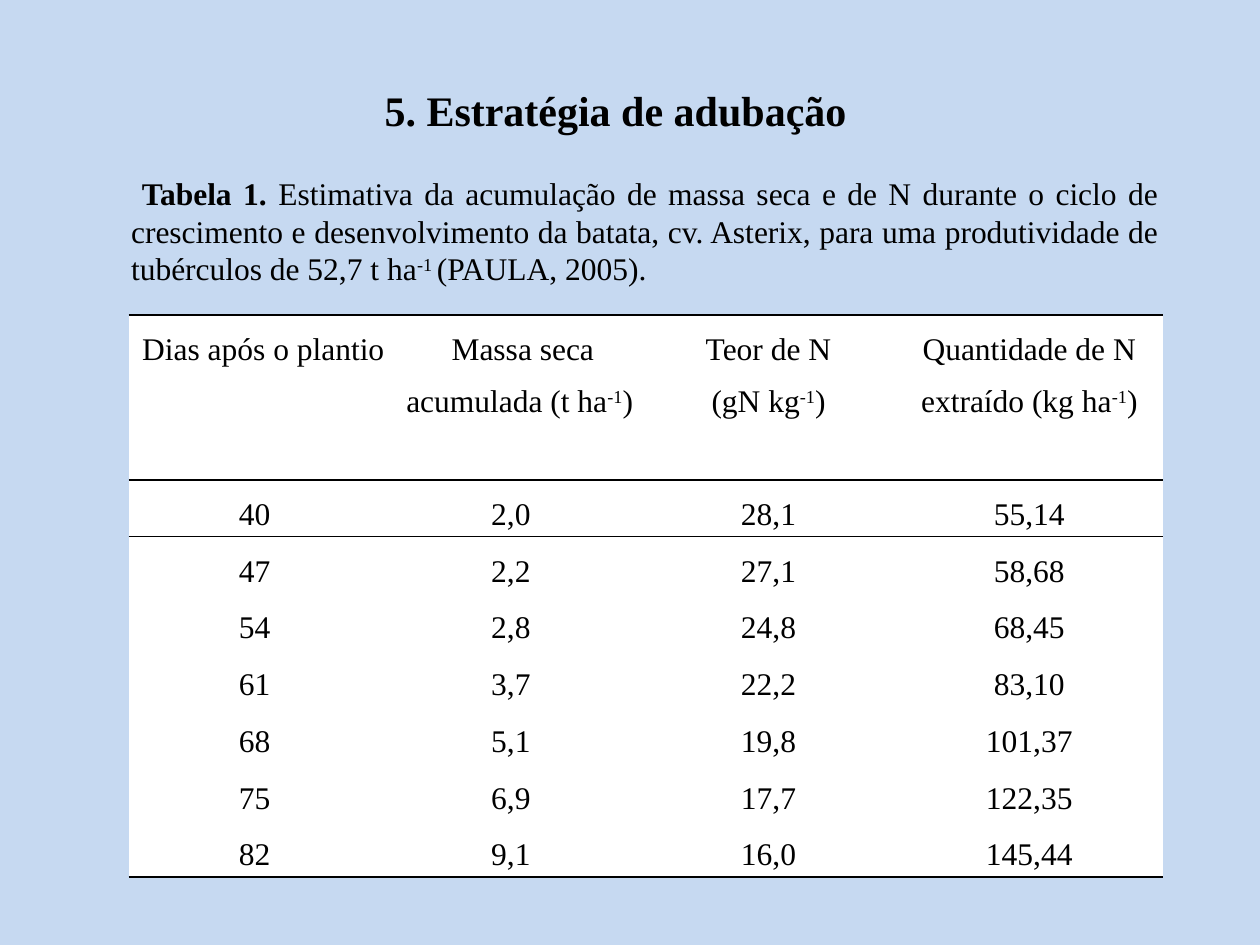
from dataclasses import dataclass

from lxml import etree
from pptx import Presentation
from pptx import util as u
from pptx.dml.color import RGBColor
from pptx.enum import text as t
from pptx.oxml import ns

FONT = "Times New Roman"
BLACK, WHITE, SKY = "000000", "FFFFFF", "C6D9F1"
PLAIN = "{2D5ABB26-0587-4C30-8999-92F81FD0307C}"  # table style without grid


@dataclass
class Box:
    left: float
    top: float
    width: float
    height: float


@dataclass
class Row:
    height: float
    cells: tuple[str, ...]
    join: int  # first of the two columns that are merged
    edges: str = ""  # ruled sides: T, B


def paint(color, code: str) -> None:
    color.rgb = RGBColor.from_string(code)


def place(shape, box: Box) -> None:
    shape.left, shape.top = u.Inches(box.left), u.Inches(box.top)
    shape.width, shape.height = u.Inches(box.width), u.Inches(box.height)


def style(run, size: float, bold: bool = False) -> None:
    run.font.name, run.font.size, run.font.bold = FONT, u.Pt(size), bold
    paint(run.font.color, BLACK)


def write(para, words: str, size: float, lead: str = "") -> None:
    """Fill a paragraph: bold lead first, then words with ^superscript^ parts."""
    if lead:
        run = para.add_run()
        run.text = lead
        style(run, size, True)
    for i, part in enumerate(words.split("^")):
        run = para.add_run()
        run.text = part
        style(run, size)
        if i % 2:
            run.font._element.set("baseline", "30000")


def rule(cell, side: str) -> None:
    """Draw a thin black line on one side of a cell."""
    line = etree.SubElement(cell._tc.get_or_add_tcPr(), ns.qn(f"a:ln{side}"), w=str(u.Pt(1)))
    fill = etree.SubElement(line, ns.qn("a:solidFill"))
    etree.SubElement(fill, ns.qn("a:srgbClr"), val=BLACK)


def dress(cell, edges: str) -> None:
    cell.margin_left = cell.margin_right = u.Inches(0.05)
    cell.margin_top = cell.margin_bottom = 0
    for side in edges:
        rule(cell, side)
    cell.fill.solid()
    paint(cell.fill.fore_color, WHITE)


def fill_cell(cell, words: str) -> None:
    frame = cell.text_frame
    for i, line in enumerate(words.split("\n")):
        para = frame.add_paragraph() if i else frame.paragraphs[0]
        para.alignment, para.line_spacing = t.PP_ALIGN.CENTER, 1.5
        write(para, line, 18)


def draw_table(slide, box: Box, widths: list[float], rows: list[Row]):
    frame = slide.shapes.add_table(
        len(rows), len(widths), u.Inches(box.left), u.Inches(box.top),
        u.Inches(box.width), u.Inches(box.height))
    table = frame.table
    table.first_row = table.horz_banding = False
    table._tbl.tblPr.find(ns.qn("a:tableStyleId")).text = PLAIN
    for col, width in zip(table.columns, widths):
        col.width = u.Inches(width)
    for r, row in enumerate(rows):
        table.rows[r].height = u.Inches(row.height)
        for c in range(len(widths)):
            dress(table.cell(r, c), row.edges)
        table.cell(r, row.join).merge(table.cell(r, row.join + 1))
        shown = [c for c in range(len(widths)) if c != row.join + 1]
        for c, words in zip(shown, row.cells):
            fill_cell(table.cell(r, c), words)
    return table


HEAD = ("Dias após o plantio", "Massa seca acumulada (t ha^-1^)",
        "Teor de N\n(gN kg^-1^)", "Quantidade de N extraído (kg ha^-1^)")
DATA = [
    ("40", "2,0", "28,1", "55,14"),
    ("47", "2,2", "27,1", "58,68"),
    ("54", "2,8", "24,8", "68,45"),
    ("61", "3,7", "22,2", "83,10"),
    ("68", "5,1", "19,8", "101,37"),
    ("75", "6,9", "17,7", "122,35"),
    ("82", "9,1", "16,0", "145,44"),
]


def main() -> None:
    deck = Presentation()
    deck.slide_width, deck.slide_height = u.Inches(10), u.Inches(7.5)
    slide = deck.slides.add_slide(deck.slide_layouts[1])
    slide.background.fill.solid()
    paint(slide.background.fill.fore_color, SKY)

    title, body = slide.shapes.title, slide.placeholders[1]
    place(title, Box(0.94, 0.62, 7.89, 0.88))
    place(body, Box(0.94, 1.33, 8.36, 1.41))
    for shape in (title, body):
        shape.text_frame.vertical_anchor = t.MSO_ANCHOR.TOP
        shape.text_frame.auto_size = t.MSO_AUTO_SIZE.NONE

    title.text_frame.text = "5. Estratégia de adubação"
    para = title.text_frame.paragraphs[0]
    para.alignment = t.PP_ALIGN.CENTER
    style(para.runs[0], 24, True)

    para = body.text_frame.paragraphs[0]
    para.alignment, para.space_before = t.PP_ALIGN.JUSTIFY, u.Pt(0)
    props = para._p.get_or_add_pPr()
    props.set("marL", "0")
    props.set("indent", "0")
    etree.SubElement(props, ns.qn("a:buNone"))
    write(para, " Estimativa da acumulação de massa seca e de N durante o ciclo de "
          "crescimento e desenvolvimento da batata, cv. Asterix, para uma produtividade "
          "de tubérculos de 52,7 t ha^-1 ^(PAULA, 2005).", 18, " Tabela 1.")

    rows = [Row(1.31, HEAD, 0, "TB")] + [Row(0.45, cells, 1) for cells in DATA]
    rows[1].edges, rows[-1].edges = "T", "B"
    table = draw_table(slide, Box(1.02, 2.5, 8.2, 4.46), [2, 0.12, 1.93, 2.02, 2.12], rows)
    mass = table.cell(0, 2).text_frame.paragraphs[0]
    mass._p.get_or_add_pPr().set("indent", str(u.Inches(0.05)))
    deck.save("out.pptx")


if __name__ == "__main__":
    main()
